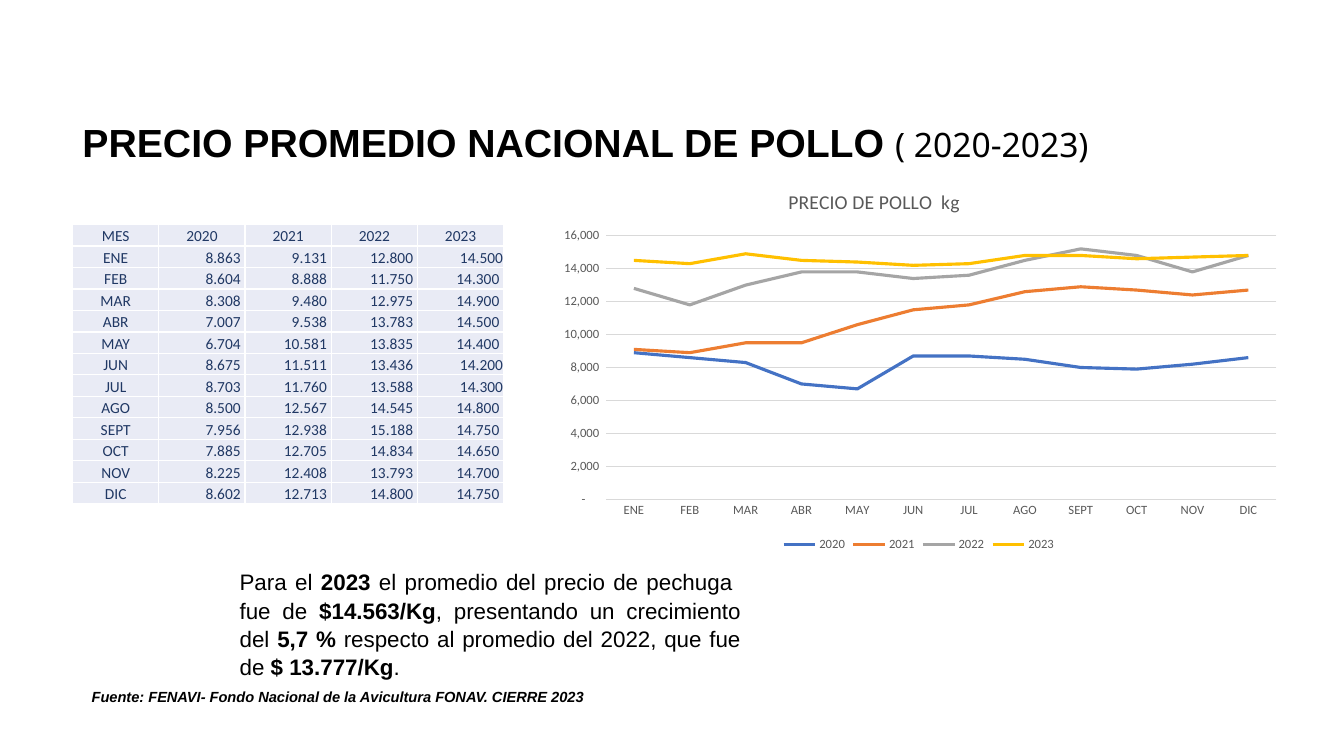
"""Build the slide on average national chicken prices, 2020-2023."""
import dataclasses
import typing

import lxml.etree
import pptx
import pptx.chart.chart
import pptx.chart.data
import pptx.dml.color
import pptx.enum.chart
import pptx.enum.text
import pptx.oxml.ns
import pptx.slide
import pptx.table
import pptx.util

Cm = pptx.util.Cm
Pt = pptx.util.Pt
Align = pptx.enum.text.PP_ALIGN
Anchor = pptx.enum.text.MSO_ANCHOR

COLOURS = {
    "text": "000000", "table text": "203864", "cell": "E9EBF5", "border": "FFFFFF",
    "chart text": "595959", "grid": "D9D9D9",
    "2020": "4472C4", "2021": "ED7D31", "2022": "A5A5A5", "2023": "FFC000",
}
YEARS = ("2020", "2021", "2022", "2023")
PRICES = {
    "ENE": (8863, 9131, 12800, 14500),
    "FEB": (8604, 8888, 11750, 14300),
    "MAR": (8308, 9480, 12975, 14900),
    "ABR": (7007, 9538, 13783, 14500),
    "MAY": (6704, 10581, 13835, 14400),
    "JUN": (8675, 11511, 13436, 14200),
    "JUL": (8703, 11760, 13588, 14300),
    "AGO": (8500, 12567, 14545, 14800),
    "SEPT": (7956, 12938, 15188, 14750),
    "OCT": (7885, 12705, 14834, 14650),
    "NOV": (8225, 12408, 13793, 14700),
    "DIC": (8602, 12713, 14800, 14750),
}
FLUSH_RIGHT = {("ENE", "2023"), ("JUN", "2023"), ("JUL", "2023")}


@dataclasses.dataclass
class Span:
    text: str
    size: float
    bold: bool = False
    italic: bool = False
    font: str = "Arial"


@dataclasses.dataclass
class TextBlock:
    left: float
    top: float
    width: float
    height: float
    spans: list[Span]
    paragraph: dict[str, typing.Any] = dataclasses.field(default_factory=dict)
    frame: dict[str, typing.Any] = dataclasses.field(default_factory=dict)


TEXT_BLOCKS = [
    TextBlock(1.83, 2.97, 28.85, 2.79, [
        Span("PRECIO PROMEDIO NACIONAL DE POLLO ", 28, bold=True),
        Span("( 2020-2023)", 24, font="Noto Sans"),
    ], {"line_spacing": 0.9}, {"margin_top": Cm(0.15)}),
    TextBlock(5.79, 14.17, 13.13, 3.1, [
        Span("Para el ", 16),
        Span("2023", 16, bold=True),
        Span(" el promedio del precio de pechuga  fue de ", 16),
        Span("$14.563/Kg", 16, bold=True),
        Span(", presentando un crecimiento del ", 16),
        Span("5,7 %", 16, bold=True),
        Span(" respecto al promedio del 2022, que fue de ", 16),
        Span("$ 13.777/Kg", 16, bold=True),
        Span(".", 16),
    ], {"alignment": Align.JUSTIFY, "line_spacing": 1.05}),
    TextBlock(2.06, 17.22, 16.94, 0.71, [
        Span("Fuente: FENAVI- Fondo Nacional de la Avicultura FONAV. CIERRE 2023",
             10.5, bold=True, italic=True),
    ]),
]


def colour(name: str) -> pptx.dml.color.RGBColor:
    return pptx.dml.color.RGBColor.from_string(COLOURS[name])


def set_format(target: typing.Any, values: dict[str, typing.Any]) -> None:
    for name, value in values.items():
        setattr(target, name, value)


def set_font(font: typing.Any, colour_name: str, **values: typing.Any) -> None:
    set_format(font, values)
    font.color.rgb = colour(colour_name)


def add_text(page: pptx.slide.Slide, block: TextBlock) -> None:
    box = page.shapes.add_textbox(
        Cm(block.left), Cm(block.top), Cm(block.width), Cm(block.height))
    set_format(box.text_frame, {"word_wrap": True, **block.frame})
    para = box.text_frame.paragraphs[0]
    set_format(para, block.paragraph)
    for span in block.spans:
        run = para.add_run()
        run.text = span.text
        set_font(run.font, "text", name=span.font, size=Pt(span.size),
                 bold=span.bold, italic=span.italic)


def add_borders(cell: typing.Any) -> None:
    properties = cell._tc.get_or_add_tcPr()
    for edge in ("a:lnL", "a:lnR", "a:lnT", "a:lnB"):
        line = lxml.etree.SubElement(properties, pptx.oxml.ns.qn(edge), w=str(Pt(1)))
        fill = lxml.etree.SubElement(line, pptx.oxml.ns.qn("a:solidFill"))
        lxml.etree.SubElement(fill, pptx.oxml.ns.qn("a:srgbClr"), val=COLOURS["border"])


def fill_cell(cell: typing.Any, text: str, alignment: Align, margin_right: float) -> None:
    set_format(cell, {
        "text": text, "vertical_anchor": Anchor.BOTTOM,
        "margin_left": Cm(0.02), "margin_right": Cm(margin_right),
        "margin_top": Cm(0.02), "margin_bottom": Cm(0),
    })
    add_borders(cell)
    cell.fill.solid()
    cell.fill.fore_color.rgb = colour("cell")
    para = cell.text_frame.paragraphs[0]
    para.alignment = alignment
    set_font(para.runs[0].font, "table text", name="Calibri", size=Pt(11), bold=False)


def add_price_table(page: pptx.slide.Slide) -> None:
    table = page.shapes.add_table(
        len(PRICES) + 1, len(YEARS) + 1, Cm(1.83), Cm(5.66), Cm(10.87), Cm(7.04)).table
    set_format(table, {"first_row": False, "horz_banding": False})
    for column, heading in enumerate(("MES", *YEARS)):
        fill_cell(table.cell(0, column), heading, Align.CENTER, 0.02)
    for row, (month, prices) in enumerate(PRICES.items(), 1):
        fill_cell(table.cell(row, 0), month, Align.CENTER, 0.02)
        for column, (year, price) in enumerate(zip(YEARS, prices), 1):
            margin = 0.02 if (month, year) in FLUSH_RIGHT else 0.11
            text = f"{price:,}".replace(",", ".")
            fill_cell(table.cell(row, column), text, Align.RIGHT, margin)


def place_part(part: typing.Any, index: int, **values: typing.Any) -> None:
    for old_layout in part.findall(pptx.oxml.ns.qn("c:layout")):
        part.remove(old_layout)
    layout = lxml.etree.Element(pptx.oxml.ns.qn("c:layout"))
    manual = lxml.etree.SubElement(layout, pptx.oxml.ns.qn("c:manualLayout"))
    for name, value in values.items():
        lxml.etree.SubElement(manual, pptx.oxml.ns.qn(f"c:{name}"), val=str(value))
    part.insert(index, layout)


def format_axes(chart: pptx.chart.chart.Chart) -> None:
    for axis in (chart.category_axis, chart.value_axis):
        axis.major_tick_mark = pptx.enum.chart.XL_TICK_MARK.NONE
        set_font(axis.tick_labels.font, "chart text", name="Calibri", size=Pt(9))
    set_format(chart.value_axis, {
        "minimum_scale": 0, "maximum_scale": 16000, "major_unit": 2000,
        "has_major_gridlines": True})
    set_format(chart.value_axis.tick_labels, {
        "number_format": '_(* #,##0_);_(* \\(#,##0\\);_(* "-"??_);_(@_)',
        "number_format_is_linked": False})
    chart.value_axis.format.line.fill.background()
    for line in (chart.category_axis.format.line,
                 chart.value_axis.major_gridlines.format.line):
        line.width = Pt(0.75)
        line.color.rgb = colour("grid")


def add_price_chart(page: pptx.slide.Slide) -> None:
    data = pptx.chart.data.CategoryChartData()
    data.categories = list(PRICES)
    for year, prices in zip(YEARS, zip(*PRICES.values())):
        data.add_series(year, [round(price, -2) for price in prices])
    chart = page.shapes.add_chart(
        pptx.enum.chart.XL_CHART_TYPE.LINE,
        Cm(13.77), Cm(4.37), Cm(18.77), Cm(9.63), data).chart
    set_font(chart.font, "text", name="Calibri", size=Pt(10))
    set_format(chart, {"has_title": True, "has_legend": True})
    title = chart.chart_title
    title.text_frame.text = "PRECIO DE POLLO  kg"
    set_font(title.text_frame.paragraphs[0].runs[0].font, "chart text",
             name="Calibri", size=Pt(14), bold=False)
    place_part(title.element, 1, xMode="edge", yMode="edge", x=0.32, y=0.03)
    plot_area = chart.element.find(".//" + pptx.oxml.ns.qn("c:plotArea"))
    place_part(plot_area, 0, layoutTarget="inner", xMode="edge", yMode="edge",
               x=0.08, y=0.163, w=0.9, h=0.69)
    set_format(chart.legend, {
        "position": pptx.enum.chart.XL_LEGEND_POSITION.BOTTOM, "include_in_layout": False})
    set_font(chart.legend.font, "chart text", name="Calibri", size=Pt(9))
    format_axes(chart)
    chart.plots[0].vary_by_categories = False
    for series in chart.plots[0].series:
        series.smooth = False
        series.marker.style = pptx.enum.chart.XL_MARKER_STYLE.NONE
        series.format.line.width = Pt(2.25)
        series.format.line.color.rgb = colour(series.name)


def main() -> None:
    deck = pptx.Presentation()
    set_format(deck, {"slide_width": Cm(33.87), "slide_height": Cm(19.05)})
    page = deck.slides.add_slide(deck.slide_layouts[6])
    add_price_chart(page)
    add_price_table(page)
    for block in TEXT_BLOCKS:
        add_text(page, block)
    deck.save("out.pptx")


if __name__ == "__main__":
    main()
